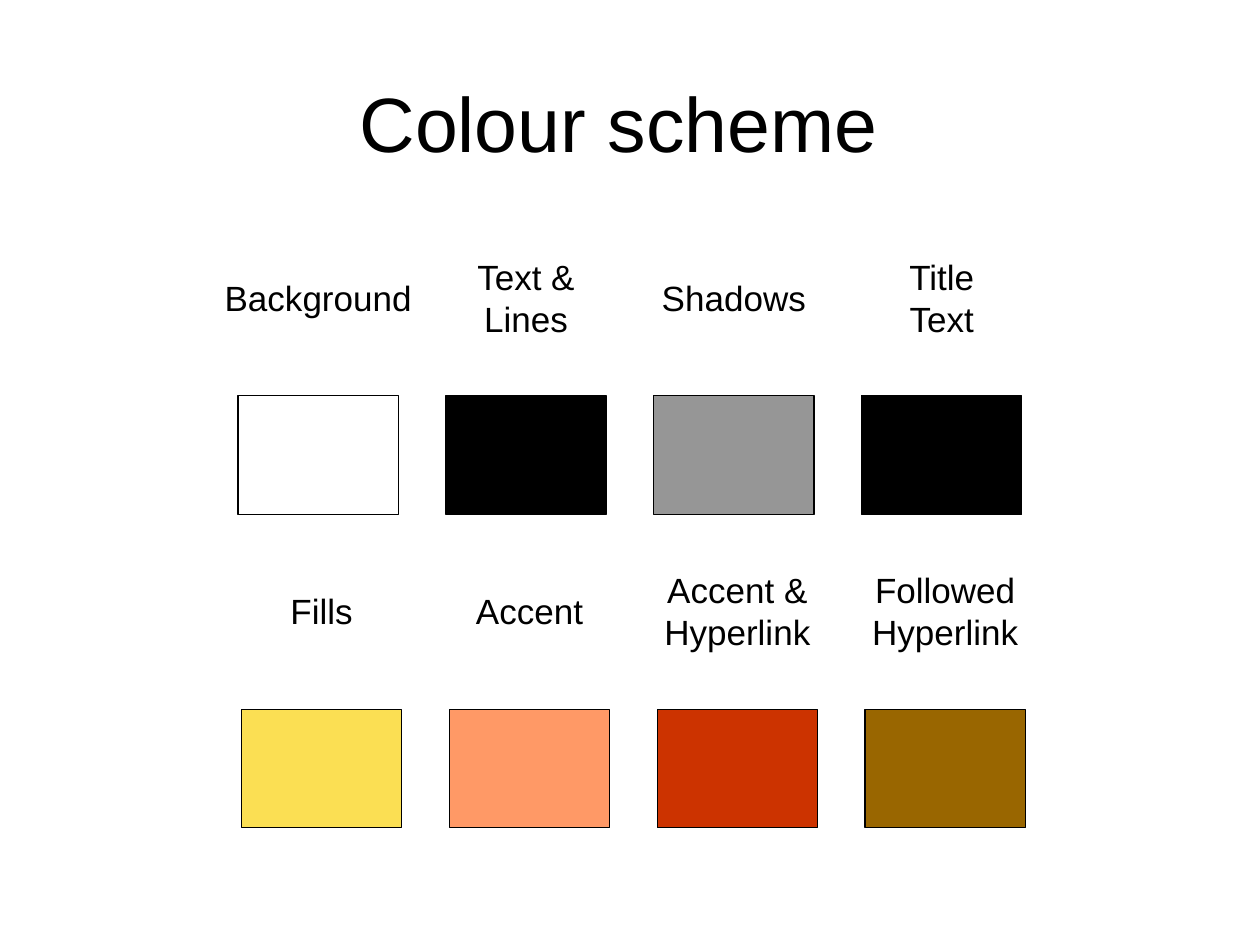
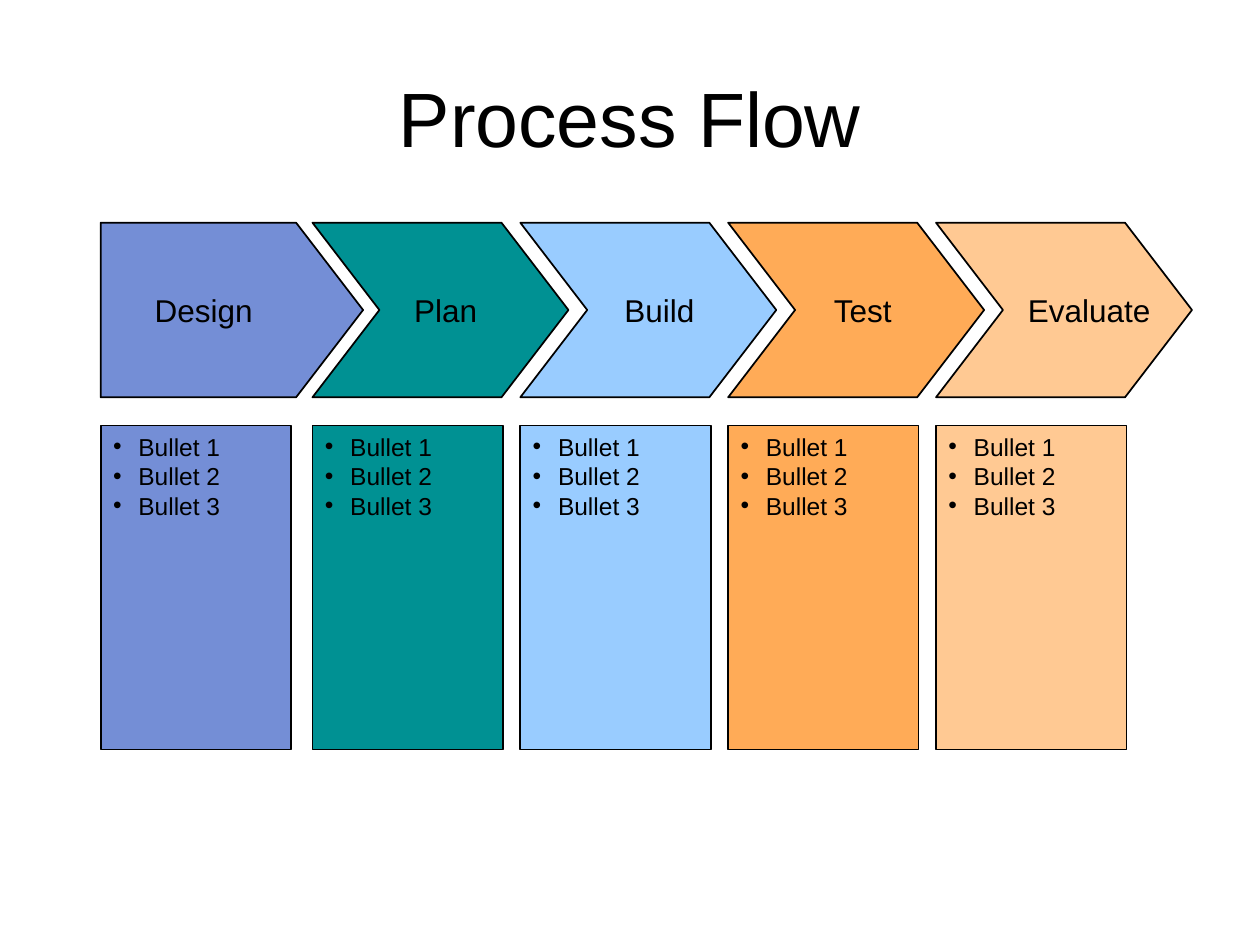
from lxml import etree
from pptx import Presentation
from pptx import util as u
from pptx.dml.color import RGBColor
from pptx.enum import shapes, text
from pptx.oxml import ns

FONT = "Arial"
COLOURS = {
    "ink": "000000", "paper": "FFFFFF", "shadow": "969696",
    "fill": "FBDF53", "accent": "FF9966", "link": "CC3300", "visited": "996600",
    "design": "748ED6", "plan": "009193", "build": "99CCFF",
    "test": "FFAB57", "evaluate": "FFC993",
}
PITCH = 4.19  # column step on both slides, in cm

SWATCH_ROWS = [
    (4.8, 7.98, [(["Background"], "paper"), (["Text &", "Lines"], "ink"),
                 (["Shadows"], "shadow"), (["Title", "Text"], "ink")]),
    (4.87, 14.3, [(["Fills"], "fill"), (["Accent"], "accent"),
                  (["Accent &", "Hyperlink"], "link"),
                  (["Followed", "Hyperlink"], "visited")]),
]
# Stage name, colour, label inset from the arrow's left edge, label width
STAGES = [
    ("Design", "design", 0.84, 2.7), ("Plan", "plan", 1.8, 2),
    ("Build", "build", 1.85, 2.2), ("Test", "test", 1.88, 2),
    ("Evaluate", "evaluate", 1.6, 3.3),
]
BULLETS = ["Bullet 1", "Bullet 2", "Bullet 3"]


def colour(name):
    return RGBColor.from_string(COLOURS[name])


def place(box):
    return [u.Cm(length) for length in box]


def add_span(para, wording, size):
    span = para.add_run()
    span.text = wording
    span.font.name = FONT
    span.font.size = u.Pt(size)
    span.font.color.rgb = colour("ink")


def add_lines(frame, lines, size, align, bullet=False):
    for index, line in enumerate(lines):
        para = frame.add_paragraph() if index else frame.paragraphs[0]
        para.alignment = align
        if bullet:
            props = para._p.get_or_add_pPr()
            indent = u.Cm(0.51)
            props.set("marL", str(indent))
            props.set("indent", str(-indent))
            etree.SubElement(props, ns.qn("a:buFont")).set("typeface", FONT)
            etree.SubElement(props, ns.qn("a:buChar")).set("char", "•")
        add_span(para, line, size)


def add_panel(page, kind, box, fill, line_width):
    panel = page.shapes.add_shape(kind, *place(box))
    panel.shadow.inherit = False
    panel.fill.solid()
    panel.fill.fore_color.rgb = colour(fill)
    panel.line.color.rgb = colour("ink")
    panel.line.width = u.Pt(line_width)
    return panel


def add_label(page, box, lines, size, align):
    frame = page.shapes.add_textbox(*place(box)).text_frame
    frame.word_wrap = False
    frame.vertical_anchor = text.MSO_ANCHOR.MIDDLE
    add_lines(frame, lines, size, align)


def add_titled_page(deck, title, left, top):
    page = deck.slides.add_slide(deck.slide_layouts[5])
    holder = page.shapes.title
    holder.left, holder.top, holder.width, holder.height = place(
        (left, top, 22.86, 3.18))
    holder.text_frame.vertical_anchor = text.MSO_ANCHOR.MIDDLE
    add_lines(holder.text_frame, [title], 44, text.PP_ALIGN.CENTER)
    return page


def add_swatch(page, left, top, lines, fill):
    """Colour sample with its name centred above it."""
    width, height = 3.23, 2.39
    label_width, label_height = 4.6, 1.96
    add_panel(page, shapes.MSO_SHAPE.RECTANGLE, (left, top, width, height),
              fill, 0.75)
    label_left = left - (label_width - width) / 2
    add_label(page, (label_left, top - 2.97, label_width, label_height),
              lines, 20, text.PP_ALIGN.CENTER)


def add_stage(page, left, top, kind, body, stage):
    """Arrow with its label, and the bullet card below it."""
    name, fill, inset, label_width = stage
    height, point = 3.52, 1.35
    arrow = add_panel(page, kind, (left, top, body + point, height), fill, 1)
    arrow.adjustments[0] = point / height
    add_label(page, (left + inset, top + 1.24, label_width, 1.02), [name], 18,
              text.PP_ALIGN.LEFT)

    card = add_panel(page, shapes.MSO_SHAPE.RECTANGLE,
                     (left, top + 4.09, 3.84, 6.53), fill, 1)
    card.text_frame.word_wrap = True
    card.text_frame.vertical_anchor = text.MSO_ANCHOR.TOP
    add_lines(card.text_frame, BULLETS, 14, text.PP_ALIGN.LEFT, bullet=True)


def colour_scheme(deck):
    page = add_titled_page(deck, "Colour scheme", 1.04, 0.86)
    for left, top, swatches in SWATCH_ROWS:
        for column, (lines, fill) in enumerate(swatches):
            add_swatch(page, left + column * PITCH, top, lines, fill)


def process_flow(deck):
    page = add_titled_page(deck, "Process Flow", 1.27, 0.76)
    left, top = 2.03, 4.49
    # The flat-backed first arrow is slightly longer than the chevrons
    first_body, body = 3.94, 3.81
    add_stage(page, left, top, shapes.MSO_SHAPE.PENTAGON, first_body, STAGES[0])
    for column, stage in enumerate(STAGES[1:]):
        add_stage(page, 6.3 + column * PITCH, top, shapes.MSO_SHAPE.CHEVRON,
                  body, stage)


def main():
    deck = Presentation()
    deck.slide_width, deck.slide_height = u.Cm(25.4), u.Cm(19.05)
    colour_scheme(deck)
    process_flow(deck)
    deck.save("out.pptx")


if __name__ == "__main__":
    main()
